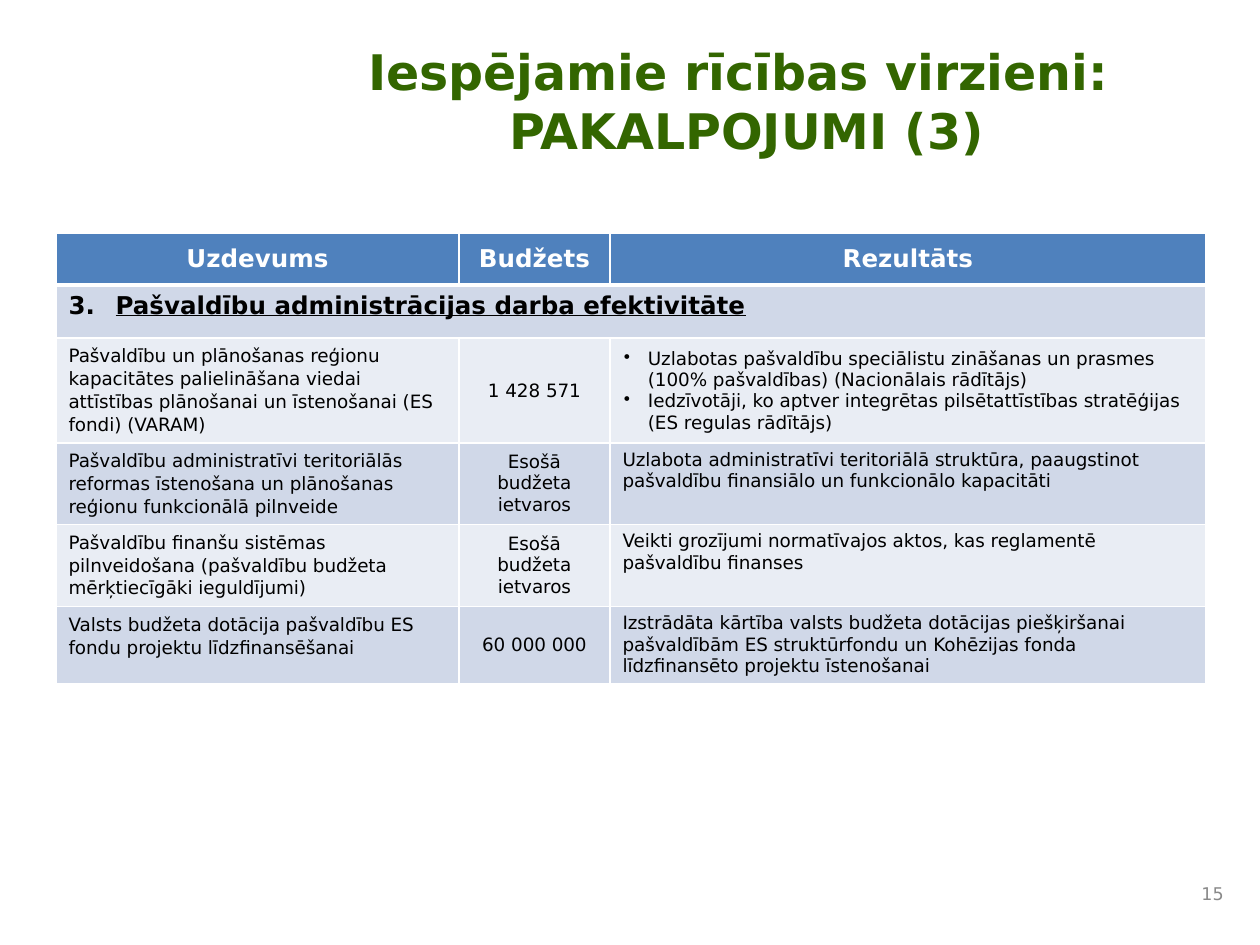
from lxml.etree import SubElement
from pptx import Presentation
from pptx.dml.color import RGBColor
from pptx.enum.text import MSO_ANCHOR, PP_ALIGN
from pptx.oxml import parse_xml
from pptx.oxml.ns import nsdecls, qn
from pptx.util import Emu, Pt

FONT = "DejaVu Sans"
HUES = {"title": "336600", "head": "4F81BD", "dark": "D0D8E8", "light": "E9EDF4",
        "white": "FFFFFF", "black": "000000", "page": "898989"}
TITLE = ["Iespējamie rīcības virzieni: ", "PAKALPOJUMI (3)"]
PAGE = "15"
HEADS = ["Uzdevums", "Budžets", "Rezultāts"]
GROUP = "Pašvaldību administrācijas darba efektivitāte"
TASKS = [
    ("Pašvaldību un plānošanas reģionu kapacitātes palielināšana viedai attīstības "
     "plānošanai un īstenošanai (ES fondi) (VARAM)",
     "1 428 571",
     ["Uzlabotas pašvaldību speciālistu zināšanas un prasmes (100% pašvaldības) "
      "(Nacionālais rādītājs)",
      "Iedzīvotāji, ko aptver integrētas pilsētattīstības stratēģijas "
      "(ES regulas rādītājs)"]),
    ("Pašvaldību administratīvi teritoriālās reformas īstenošana un plānošanas "
     "reģionu funkcionālā pilnveide",
     "Esošā budžeta ietvaros",
     ["Uzlabota administratīvi teritoriālā struktūra, paaugstinot pašvaldību "
      "finansiālo un funkcionālo kapacitāti"]),
    ("Pašvaldību finanšu sistēmas pilnveidošana (pašvaldību budžeta "
     "mērķtiecīgāki ieguldījumi)",
     "Esošā budžeta ietvaros",
     ["Veikti grozījumi normatīvajos aktos, kas reglamentē pašvaldību finanses"]),
    ("Valsts budžeta dotācija pašvaldību ES fondu projektu līdzfinansēšanai",
     "60 000 000",
     ["Izstrādāta kārtība valsts budžeta dotācijas piešķiršanai pašvaldībām ES "
      "struktūrfondu un Kohēzijas fonda līdzfinansēto projektu īstenošanai"]),
]
COLS = [403, 151, 596]
ROWS = [52, 53, 105, 81, 82, 76]


def px(num):
    return Emu(round(num * 914400 / 126))


def style(para, size, hue, bold=False, align=PP_ALIGN.LEFT, line=None):
    para.alignment = align
    if line:
        para.line_spacing = line
    font = para.font
    font.name, font.size, font.bold = FONT, Pt(size), bold
    font.color.rgb = RGBColor.from_string(HUES[hue])


def label(slide, box, lines, size, hue, bold, align):
    frame = slide.shapes.add_textbox(*map(px, box)).text_frame
    frame.word_wrap = True
    frame.vertical_anchor = MSO_ANCHOR.MIDDLE
    para = frame.paragraphs[0]
    for i, text in enumerate(lines):
        if i:
            para.add_line_break()
        para.add_run().text = text
    style(para, size, hue, bold, align)


def bullet(para, tag, left, hang, **attrs):
    props = para._p.get_or_add_pPr()
    props.set("marL", str(px(left)))
    props.set("indent", str(-px(hang)))
    SubElement(props, qn(tag), attrs)


def paint(cell, hue, top, base):
    cell.fill.solid()
    cell.fill.fore_color.rgb = RGBColor.from_string(HUES[hue])
    props = cell._tc.get_or_add_tcPr()
    for i, (side, wide) in enumerate(zip("LRTB", (1, 1, top, base))):
        props.insert(i, parse_xml(
            f'<a:ln{side} {nsdecls("a")} w="{Pt(wide)}"><a:solidFill>'
            f'<a:srgbClr val="{HUES["white"]}"/></a:solidFill></a:ln{side}>'))


def tight(cell):
    cell.vertical_anchor = MSO_ANCHOR.MIDDLE
    cell.margin_left = cell.margin_right = cell.margin_top = px(1)
    cell.margin_bottom = 0


def fill_table(slide):
    table = slide.shapes.add_table(len(ROWS), len(COLS), px(56), px(233),
                                   px(sum(COLS)), px(sum(ROWS))).table
    table.first_row = table.horz_banding = False
    for col, wide in zip(table.columns, COLS):
        col.width = px(wide)
    for r, (row, high) in enumerate(zip(table.rows, ROWS)):
        row.height = px(high)
        hue = "head" if r == 0 else "dark" if r % 2 else "light"
        for cell in row.cells:
            paint(cell, hue, 3 if r == 1 else 1, 3 if r == 0 else 1)

    for c, text in enumerate(HEADS):
        cell = table.cell(0, c)
        cell.text = text
        cell.vertical_anchor = MSO_ANCHOR.MIDDLE
        style(cell.text_frame.paragraphs[0], 14, "white", True, PP_ALIGN.CENTER)

    group = table.cell(1, 0)
    group.merge(table.cell(1, len(COLS) - 1))
    group.text = GROUP
    para = group.text_frame.paragraphs[0]
    bullet(para, "a:buAutoNum", 47, 47, type="arabicPeriod", startAt="3")
    style(para, 14, "black", True)
    para.font.underline = True

    for r, (task, cost, goals) in enumerate(TASKS, 2):
        left, mid, right = table.rows[r].cells
        left.text, mid.text, right.text = task, cost, "\n".join(goals)
        style(left.text_frame.paragraphs[0], 10.5, "black", line=1.07)
        mid.vertical_anchor = MSO_ANCHOR.MIDDLE
        style(mid.text_frame.paragraphs[0], 10.5, "black", align=PP_ALIGN.CENTER)
        many = len(goals) > 1
        if many:
            tight(mid)
            tight(right)
        for para in right.text_frame.paragraphs:
            if many:
                bullet(para, "a:buChar", 37, 24, char="•")
            style(para, 10.5, "black")


def main():
    deck = Presentation()
    deck.slide_width, deck.slide_height = px(1260), px(945)
    slide = deck.slides.add_slide(deck.slide_layouts[6])
    fill_table(slide)
    label(slide, (1176, 872, 60, 42), [PAGE], 10, "page", False, PP_ALIGN.RIGHT)
    label(slide, (304, 25, 885, 151), TITLE, 28, "title", True, PP_ALIGN.CENTER)
    deck.save("out.pptx")


if __name__ == "__main__":
    main()
